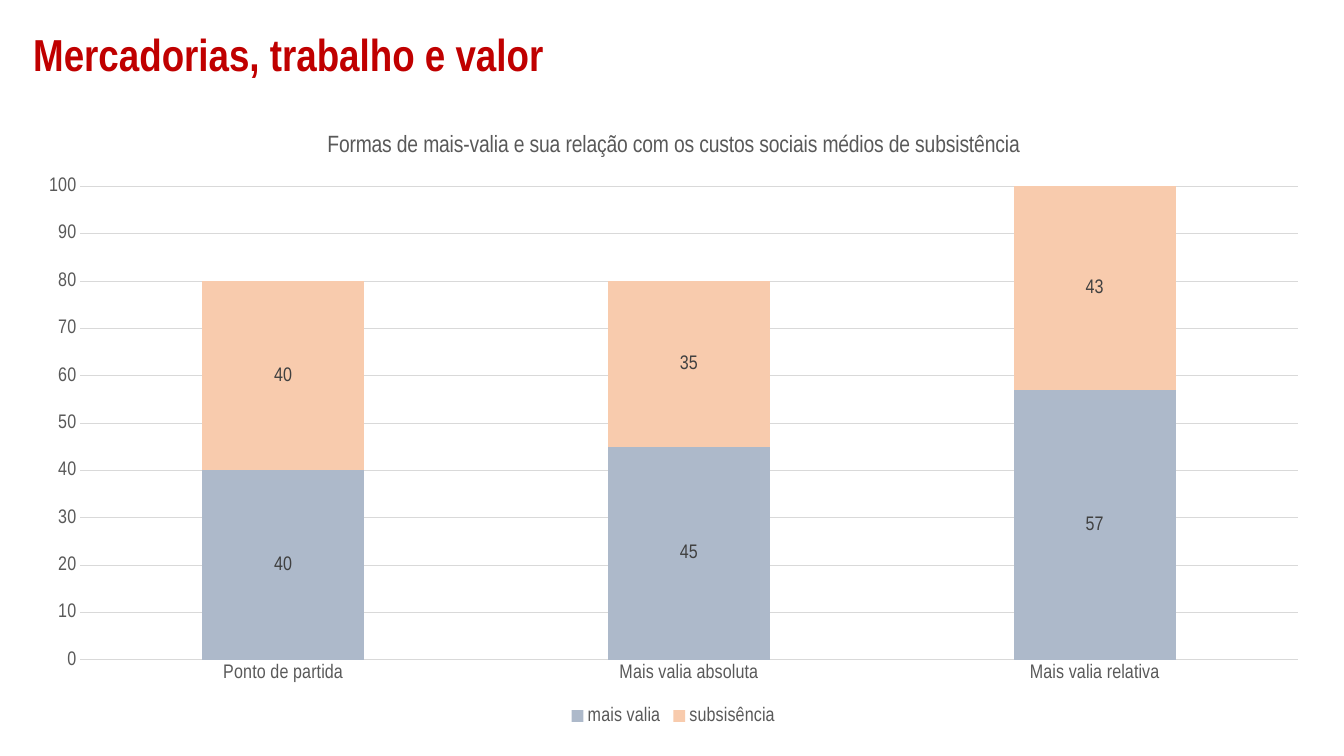
from pptx import Presentation
from pptx.chart.data import CategoryChartData
from pptx.dml.color import RGBColor
from pptx.enum.chart import XL_CHART_TYPE, XL_LABEL_POSITION, XL_LEGEND_POSITION, XL_TICK_MARK
from pptx.enum.text import MSO_ANCHOR, PP_ALIGN
from pptx.util import Pt

STACKED = XL_CHART_TYPE.COLUMN_STACKED
CENTER = XL_LABEL_POSITION.CENTER
BOTTOM = XL_LEGEND_POSITION.BOTTOM
NO_TICK = XL_TICK_MARK.NONE
MIDDLE = MSO_ANCHOR.MIDDLE
LEFT = PP_ALIGN.LEFT

FONT = "Arial Narrow"
RED = RGBColor(0xC0, 0x00, 0x00)
BLACK = RGBColor(0x00, 0x00, 0x00)
GREY = RGBColor(0x59, 0x59, 0x59)
DARK = RGBColor(0x40, 0x40, 0x40)
GRID = RGBColor(0xD9, 0xD9, 0xD9)
BLUE = RGBColor(0xAD, 0xB9, 0xCA)
PEACH = RGBColor(0xF8, 0xCB, 0xAD)

CATEGORIES = ["Ponto de partida", "Mais valia absoluta", "Mais valia relativa"]
SERIES = [
    ("mais valia", [40, 45, 57], BLUE),
    ("subsisência", [40, 35, 43], PEACH),
]


def style_font(font, size, color, bold=False):
    """Set the typeface, size, colour and weight of a font."""
    font.name = FONT
    font.size = Pt(size)
    font.color.rgb = color
    font.bold = bold


def style_line(line):
    """Give an axis or gridline the thin light grey stroke."""
    line.color.rgb = GRID
    line.width = Pt(0.75)


def add_title(s, text, x, y, w, h):
    """Place and format the slide title in the given box."""
    sp = s.shapes.title
    sp.left, sp.top, sp.width, sp.height = Pt(x), Pt(y), Pt(w), Pt(h)
    tf = sp.text_frame
    tf.text = text
    tf.vertical_anchor = MIDDLE
    p = tf.paragraphs[0]
    p.alignment = LEFT
    p.line_spacing = 0.9
    style_font(p.runs[0].font, 32, RED, True)


def style_axes(chart):
    """Format the category and value axes."""
    cat, val = chart.category_axis, chart.value_axis
    for axis in (cat, val):
        axis.major_tick_mark = axis.minor_tick_mark = NO_TICK
        style_font(axis.tick_labels.font, 14, GREY)
    style_line(cat.format.line)
    val.format.line.fill.background()
    val.minimum_scale, val.maximum_scale, val.major_unit = 0, 100, 10
    val.has_major_gridlines = True
    style_line(val.major_gridlines.format.line)


def add_value_chart(s, title, x, y, w, h):
    """Draw the stacked columns of surplus value and subsistence in the given box."""
    data = CategoryChartData()
    data.categories = CATEGORIES
    for name, values, _ in SERIES:
        data.add_series(name, values)
    chart = s.shapes.add_chart(STACKED, Pt(x), Pt(y), Pt(w), Pt(h), data).chart
    style_font(chart.font, 14, BLACK)

    tf = chart.chart_title.text_frame
    tf.text = title
    style_font(tf.paragraphs[0].runs[0].font, 16.8, GREY)
    chart.chart_title.include_in_layout = False

    chart.has_legend = True
    chart.legend.position = BOTTOM
    chart.legend.include_in_layout = False
    style_font(chart.legend.font, 14, GREY)

    style_axes(chart)
    plot = chart.plots[0]
    plot.gap_width, plot.overlap = 150, 100
    plot.vary_by_categories = False
    for series, (_, _, color) in zip(plot.series, SERIES):
        series.format.fill.solid()
        series.format.fill.fore_color.rgb = color
        labels = series.data_labels
        labels.show_value = True
        labels.position = CENTER
        style_font(labels.font, 14, DARK)


def main():
    """Build the slide and save it."""
    prs = Presentation()
    prs.slide_width, prs.slide_height = Pt(960), Pt(540)
    s = prs.slides.add_slide(prs.slide_layouts[5])
    add_title(s, "Mercadorias, trabalho e valor", 16.5, 15, 929, 51)
    add_value_chart(
        s,
        "Formas de mais-valia e sua relação com os custos sociais médios de subsistência",
        16.5, 79, 929, 442,
    )
    prs.save("out.pptx")


if __name__ == "__main__":
    main()
